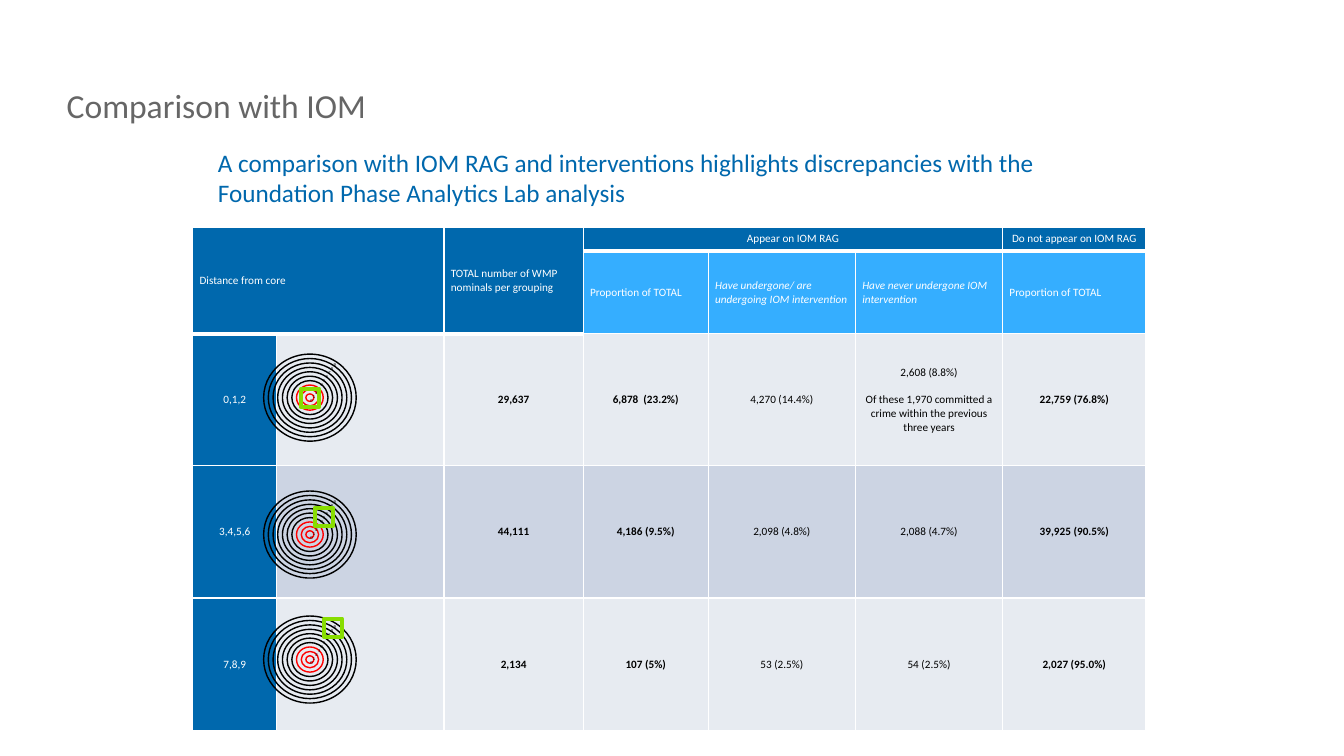
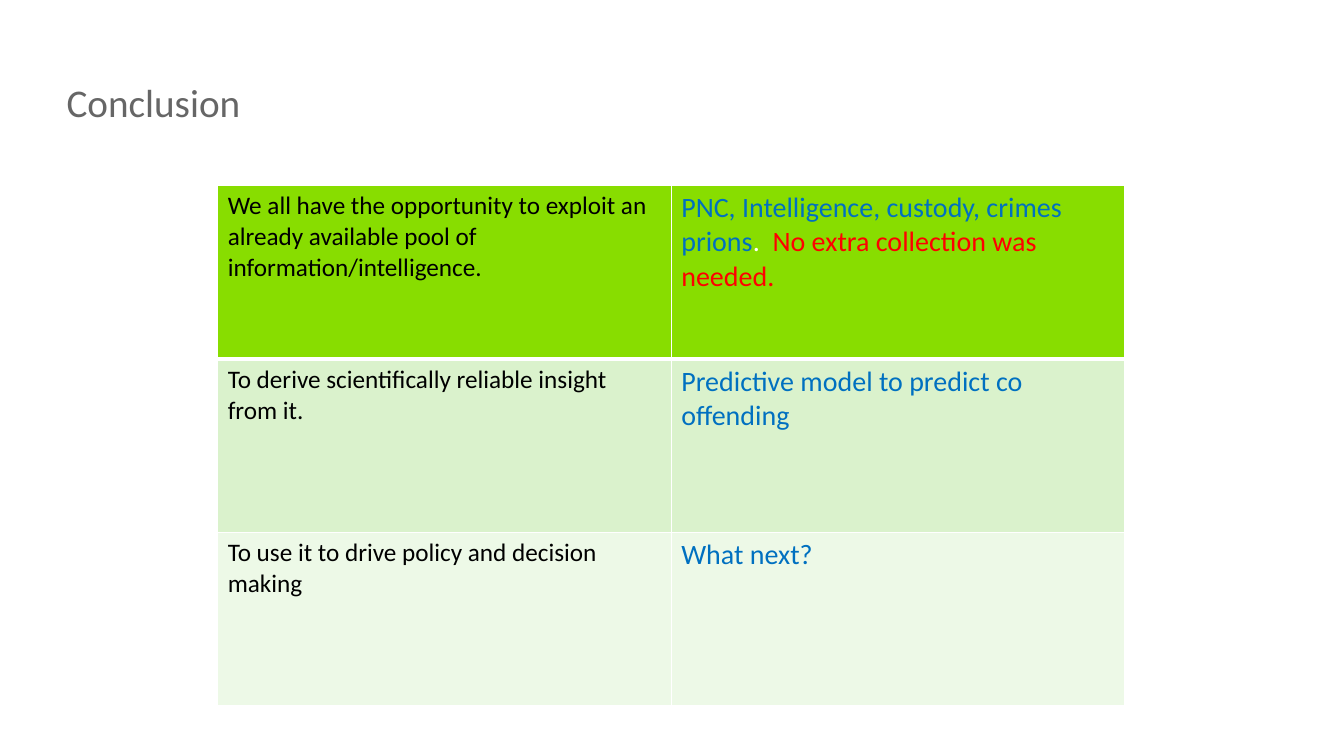
from dataclasses import dataclass
from typing import Optional, Sequence

from lxml.etree import SubElement
from pptx import Presentation
from pptx.dml.color import RGBColor
from pptx.enum.shapes import MSO_SHAPE as Shape
from pptx.enum.text import MSO_ANCHOR as Anchor, PP_ALIGN as Align
from pptx.oxml.ns import qn
from pptx.util import Cm, Pt

WHITE = RGBColor(0xFF, 0xFF, 0xFF)
BLACK = RGBColor(0x00, 0x00, 0x00)
RED = RGBColor(0xFF, 0x00, 0x00)
GREY = RGBColor(0x66, 0x66, 0x66)
NAVY = RGBColor(0x00, 0x68, 0xAD)
SKY = RGBColor(0x35, 0xAE, 0xFF)
BLUE = RGBColor(0x00, 0x70, 0xC0)
PALE = RGBColor(0xE7, 0xEB, 0xF1)
MIST = RGBColor(0xCC, 0xD4, 0xE3)
LIME = RGBColor(0x88, 0xDD, 0x00)
LEAF = RGBColor(0xDA, 0xF2, 0xCC)
MINT = RGBColor(0xED, 0xF9, 0xE7)

FONT = "Calibri"
LABEL_FONT = "Arial"

RING_COUNT = 10
RED_RINGS = 3
RING_RATIO = 0.94
TARGET_X = 7.81
MARKER_SIZE = 0.46


@dataclass
class Run:
    text: str
    size: float
    color: RGBColor
    bold: bool = False
    italic: bool = False
    font: str = FONT


@dataclass
class Cell:
    paragraphs: Sequence[Sequence[Run]]
    fill: RGBColor
    align: Align = Align.LEFT
    rows: int = 1
    cols: int = 1


@dataclass
class Target:
    """Rings centred at height y, with a marker offset from the centre, in cm."""
    y: float
    marker_dx: float
    marker_dy: float


Grid = Sequence[Sequence[Optional[Cell]]]


def add_runs(p, runs: Sequence[Run]) -> None:
    for run in runs:
        r = p.add_run()
        r.text = run.text
        r.font.name = run.font
        r.font.size = Pt(run.size)
        r.font.bold = run.bold
        r.font.italic = run.italic
        r.font.color.rgb = run.color


def add_text(shapes, box: Sequence[float], run: Run, anchor=Anchor.TOP,
             align=Align.LEFT, inset_top: float = 0) -> None:
    tf = shapes.add_textbox(*map(Cm, box)).text_frame
    tf.word_wrap = True
    tf.vertical_anchor = anchor
    tf.margin_left = tf.margin_right = tf.margin_bottom = 0
    tf.margin_top = Cm(inset_top)
    p = tf.paragraphs[0]
    p.alignment = align
    add_runs(p, [run])


def add_title(s, text: str, size: float) -> None:
    add_text(s.shapes, (1.68, 0.36, 30.48, 2.79), Run(text, size, GREY),
             Anchor.BOTTOM, inset_top=0.13)


def set_borders(cell, bottom: float) -> None:
    tc_pr = cell._tc.get_or_add_tcPr()
    for side, width in (("L", 1), ("R", 1), ("T", 1), ("B", bottom)):
        line = SubElement(tc_pr, qn(f"a:ln{side}"), w=str(Pt(width)))
        fill = SubElement(line, qn("a:solidFill"))
        SubElement(fill, qn("a:srgbClr"), val=str(WHITE))


def add_table(s, left: float, top: float, widths: Sequence[float],
              heights: Sequence[float], grid: Grid, anchor=Anchor.TOP,
              inset_x: float = 0.25, inset_y: float = 0.13) -> None:
    """Draw a bordered table; None marks a cell covered by a merged one."""
    table = s.shapes.add_table(len(heights), len(widths), Cm(left), Cm(top),
                               Cm(sum(widths)), Cm(sum(heights))).table
    table.first_row = table.horz_banding = False
    for column, width in zip(table.columns, widths):
        column.width = Cm(width)
    for row, height in zip(table.rows, heights):
        row.height = Cm(height)
    for i, cells in enumerate(grid):
        for j, content in enumerate(cells):
            cell = table.cell(i, j)
            set_borders(cell, 3 if i == 0 else 1)
            cell.vertical_anchor = anchor
            cell.margin_left = cell.margin_right = Cm(inset_x)
            cell.margin_top = cell.margin_bottom = Cm(inset_y)
            if content is None:
                continue
            cell.fill.solid()
            cell.fill.fore_color.rgb = content.fill
            if content.rows * content.cols > 1:
                cell.merge(table.cell(i + content.rows - 1, j + content.cols - 1))
            tf = cell.text_frame
            for k, runs in enumerate(content.paragraphs):
                p = tf.add_paragraph() if k else tf.paragraphs[0]
                p.alignment = content.align
                if k:
                    p.space_before = Pt(10)
                add_runs(p, runs)


def add_outline(shapes, kind: Shape, cx: float, cy: float, width: float,
                height: float, color: RGBColor, weight: float) -> None:
    sp = shapes.add_shape(kind, Cm(cx - width / 2), Cm(cy - height / 2),
                          Cm(width), Cm(height))
    sp.shadow.inherit = False
    sp.fill.background()
    sp.line.color.rgb = color
    sp.line.width = Pt(weight)


def add_target(s, target: Target) -> None:
    shapes = s.shapes.add_group_shape().shapes
    for i in range(RING_COUNT):
        width = 0.2 + 0.237 * i
        add_outline(shapes, Shape.OVAL, TARGET_X, target.y, width,
                    width * RING_RATIO, RED if i < RED_RINGS else BLACK, 1)
    for i in range(RING_COUNT):
        cx = TARGET_X + 0.04 + 0.065 * i
        cy = target.y + 0.08 - 0.1 * i
        add_text(shapes, (cx - 0.065, cy - 0.19, 0.13, 0.38),
                 Run(str(i), 3, BLACK, font=LABEL_FONT), Anchor.MIDDLE, Align.CENTER)
    add_outline(shapes, Shape.RECTANGLE, TARGET_X + target.marker_dx,
                target.y + target.marker_dy, MARKER_SIZE, MARKER_SIZE, LIME, 3)


def header(text: str, fill: RGBColor = NAVY, align=Align.LEFT, rows: int = 1,
           cols: int = 1, italic: bool = False) -> Cell:
    return Cell([[Run(text, 8, WHITE, italic=italic)]], fill, align, rows, cols)


def figure_row(fill: RGBColor, distance: str, total: str, on_rag: str,
               treated: str, untreated: Sequence[str], off_rag: str) -> list[Cell]:
    def figure(*texts: str, bold: bool = False) -> Cell:
        return Cell([[Run(t, 8, BLACK, bold)] for t in texts], fill, Align.CENTER)

    return [header(distance, align=Align.CENTER), Cell([], fill),
            figure(total, bold=True), figure(on_rag, bold=True),
            figure(treated), figure(*untreated), figure(off_rag, bold=True)]


def build_comparison(s) -> None:
    grid = [
        [header("Distance from core", rows=2, cols=2), None,
         header("TOTAL number of WMP nominals per grouping", rows=2),
         header("Appear on IOM RAG", align=Align.CENTER, cols=3), None, None,
         header("Do not appear on IOM RAG", align=Align.CENTER)],
        [None, None, None,
         header("Proportion of TOTAL", SKY),
         header("Have undergone/ are undergoing IOM intervention", SKY, italic=True),
         header("Have never undergone IOM intervention", SKY, italic=True),
         header("Proportion of TOTAL", SKY)],
        figure_row(PALE, "0,1,2", "29,637", "6,878  (23.2%)", "4,270 (14.4%)",
                   ["2,608 (8.8%)",
                    "Of these 1,970 committed a crime within the previous three years"],
                   "22,759 (76.8%)"),
        figure_row(MIST, "3,4,5,6", "44,111", "4,186 (9.5%)", "2,098 (4.8%)",
                   ["2,088 (4.7%)"], "39,925 (90.5%)"),
        figure_row(PALE, "7,8,9", "2,134", "107 (5%)", "53 (2.5%)",
                   ["54 (2.5%)"], "2,027 (95.0%)"),
    ]
    add_table(s, 4.86, 5.72, [2.11, 4.22, 3.51, 3.15, 3.71, 3.71, 3.61],
              [0.61, 2.08] + [3.33] * 3, grid, Anchor.MIDDLE, 0.17, 0)
    for target in (Target(10.02, 0, 0.01), Target(13.47, 0.35, -0.44),
                   Target(16.62, 0.58, -0.8)):
        add_target(s, target)
    add_title(s, "Comparison with IOM", 24)
    add_text(s.shapes, (5.49, 3.58, 22.86, 1.09),
             Run("A comparison with IOM RAG and interventions highlights discrepancies "
                 "with the Foundation Phase Analytics Lab analysis", 18, NAVY),
             inset_top=0.13)


def build_conclusion(s) -> None:
    rows = [
        (LIME, "We all have the opportunity to exploit an already available pool of "
               "information/intelligence.",
         [Run("PNC, Intelligence, custody, crimes prions", 20, BLUE),
          Run(".  ", 20, WHITE),
          Run("No extra collection was needed.", 20, RED)]),
        (LEAF, "To derive scientifically reliable insight from it.",
         [Run("Predictive model to predict co offending", 20, BLUE)]),
        (MINT, "To use it to drive policy and decision making",
         [Run("What next?", 20, BLUE)]),
    ]
    grid = [[Cell([[Run(aim, 18, BLACK)]], fill), Cell([answer], fill)]
            for fill, aim, answer in rows]
    add_table(s, 5.49, 4.68, [11.43] * 2, [4.37] * 3, grid)
    add_title(s, "Conclusion", 28)


def main() -> None:
    prs = Presentation()
    prs.slide_width, prs.slide_height = Cm(33.87), Cm(19.05)
    blank = prs.slide_layouts[6]
    for build in (build_comparison, build_conclusion):
        build(prs.slides.add_slide(blank))
    prs.save("out.pptx")


if __name__ == "__main__":
    main()
